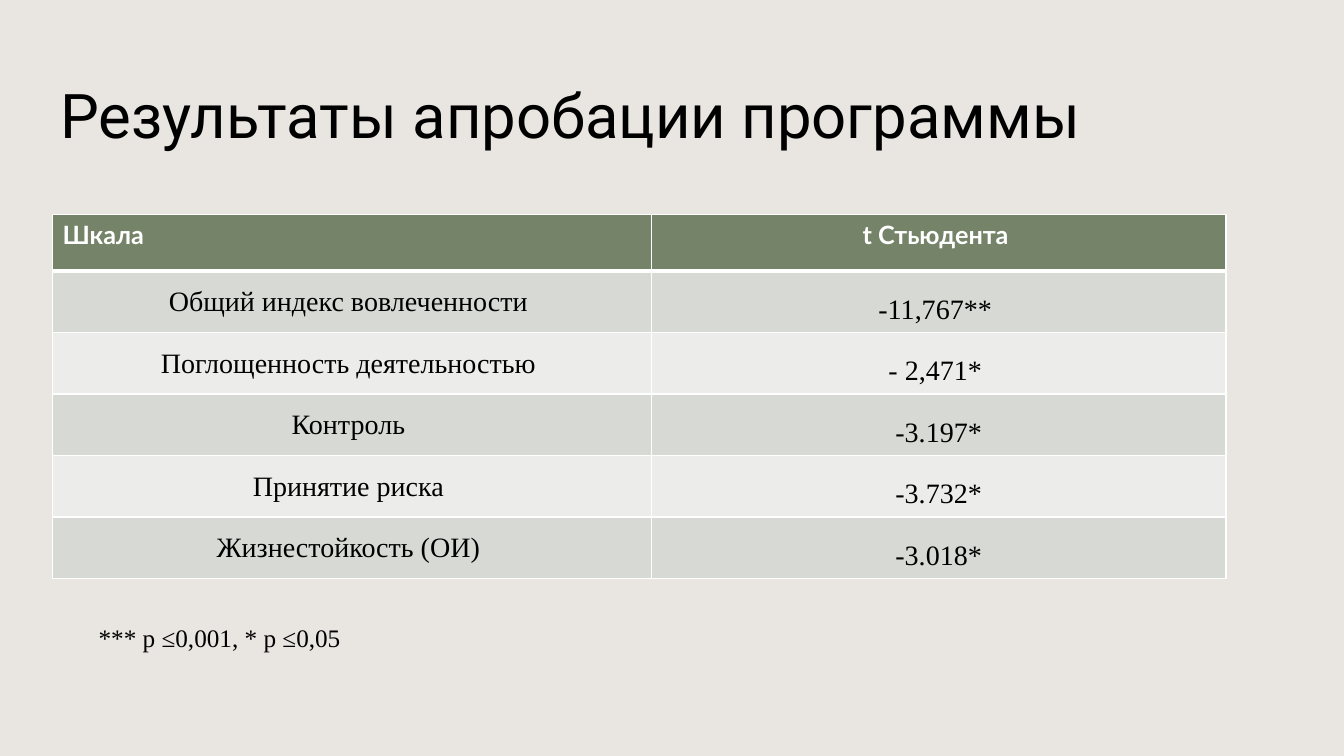
from lxml import etree
from pptx import Presentation, util as u
from pptx.dml.color import RGBColor
from pptx.enum import text
from pptx.oxml import ns

PX = 9144  # EMU per px, 100 px to the inch
BACKGROUND = RGBColor(0xE9, 0xE5, 0xE1)
BLACK = RGBColor(0x00, 0x00, 0x00)
WHITE = RGBColor(0xFF, 0xFF, 0xFF)
GREEN = RGBColor(0x75, 0x84, 0x68)
BANDS = RGBColor(0xD6, 0xD9, 0xD4), RGBColor(0xEC, 0xED, 0xEB)

TITLE_FONT = {"name": "Roboto", "size": u.Pt(44)}
HEADER_FONT = {"name": "Lato", "size": u.Pt(18), "bold": True}
BODY_FONT = {"name": "Times New Roman", "size": u.Pt(20), "bold": False}
NOTE_FONT = {"name": "Times New Roman", "size": u.Pt(18)}
LOOSE = {"line_spacing": 1.5, "space_after": u.Pt(10)}
CENTRED = {"alignment": text.PP_ALIGN.CENTER}
BODY_MARGINS = {"margin_left": 7 * PX, "margin_right": 7 * PX,
                "margin_top": 0, "margin_bottom": 0}

HEADERS = "Шкала", "t Стьюдента "
RESULTS = [
    ("Общий индекс вовлеченности ", "-11,767** "),
    ("Поглощенность деятельностью ", "- 2,471* "),
    ("Контроль ", "-3.197*"),
    ("Принятие риска ", "-3.732*"),
    ("Жизнестойкость (ОИ) ", "-3.018*"),
]


def px(*lengths):
    return [u.Emu(length * PX) for length in lengths]


def set_all(target, values):
    for name, value in values.items():
        setattr(target, name, value)


def write(frame, words, font, color, layout):
    paragraph = frame.paragraphs[0]
    set_all(paragraph, layout)
    run = paragraph.add_run()
    run.text = words
    set_all(run.font, font)
    run.font.color.rgb = color
    return paragraph


def add_text(slide, box, words, font, layout, anchor):
    frame = slide.shapes.add_textbox(*px(*box)).text_frame
    set_all(frame, {"word_wrap": True, "vertical_anchor": anchor})
    return write(frame, words, font, BLACK, layout)


def add_borders(cell, widths):
    """Draw white left, right, top and bottom borders, widths in points."""
    properties = cell._tc.get_or_add_tcPr()
    for index, (side, width) in enumerate(zip("LRTB", widths)):
        line = etree.Element(ns.qn(f"a:ln{side}"), w=str(u.Pt(width)))
        fill = etree.SubElement(line, ns.qn("a:solidFill"))
        etree.SubElement(fill, ns.qn("a:srgbClr"), val=str(WHITE))
        properties.insert(index, line)


def add_results_table(slide, box, column_widths, header_height):
    left, top, width, height = box
    table = slide.shapes.add_table(len(RESULTS) + 1, 2, *px(*box)).table
    for column, column_width in zip(table.columns, px(*column_widths)):
        column.width = column_width
    row_height = (height - header_height) // len(RESULTS)
    for index, row in enumerate(table.rows):
        row.height = px(row_height if index else header_height)[0]

    for row, words in enumerate([HEADERS, *RESULTS]):
        for column, label in enumerate(words):
            cell = table.cell(row, column)
            cell.fill.solid()
            if row == 0:
                cell.fill.fore_color.rgb = GREEN
                write(cell.text_frame, label, HEADER_FONT, WHITE, CENTRED if column else {})
            else:
                cell.fill.fore_color.rgb = BANDS[(row - 1) % 2]
                set_all(cell, BODY_MARGINS)
                if column:
                    cell.vertical_anchor = text.MSO_ANCHOR.MIDDLE
                write(cell.text_frame, label, BODY_FONT, BLACK, CENTRED | LOOSE)
            add_borders(cell, (1, 1, 3 if row == 1 else 1, 3 if row == 0 else 1))


def add_note(slide, box):
    paragraph = add_text(slide, box, "*** p ≤0,001, * p ≤0,05", NOTE_FONT, LOOSE,
                         text.MSO_ANCHOR.TOP)
    paragraph._p.get_or_add_pPr().set("indent", str(49 * PX))


def main():
    presentation = Presentation()
    presentation.slide_width, presentation.slide_height = px(1333, 750)
    slide = presentation.slides.add_slide(presentation.slide_layouts[6])
    slide.background.fill.solid()
    slide.background.fill.fore_color.rgb = BACKGROUND
    add_text(slide, (50, 40, 1192, 145), "Результаты апробации программы",
             TITLE_FONT, {}, text.MSO_ANCHOR.MIDDLE)
    add_results_table(slide, (52, 213, 1164, 361), (594, 570), 56)
    add_note(slide, (39, 597, 666, 50))
    presentation.save("out.pptx")


if __name__ == "__main__":
    main()
